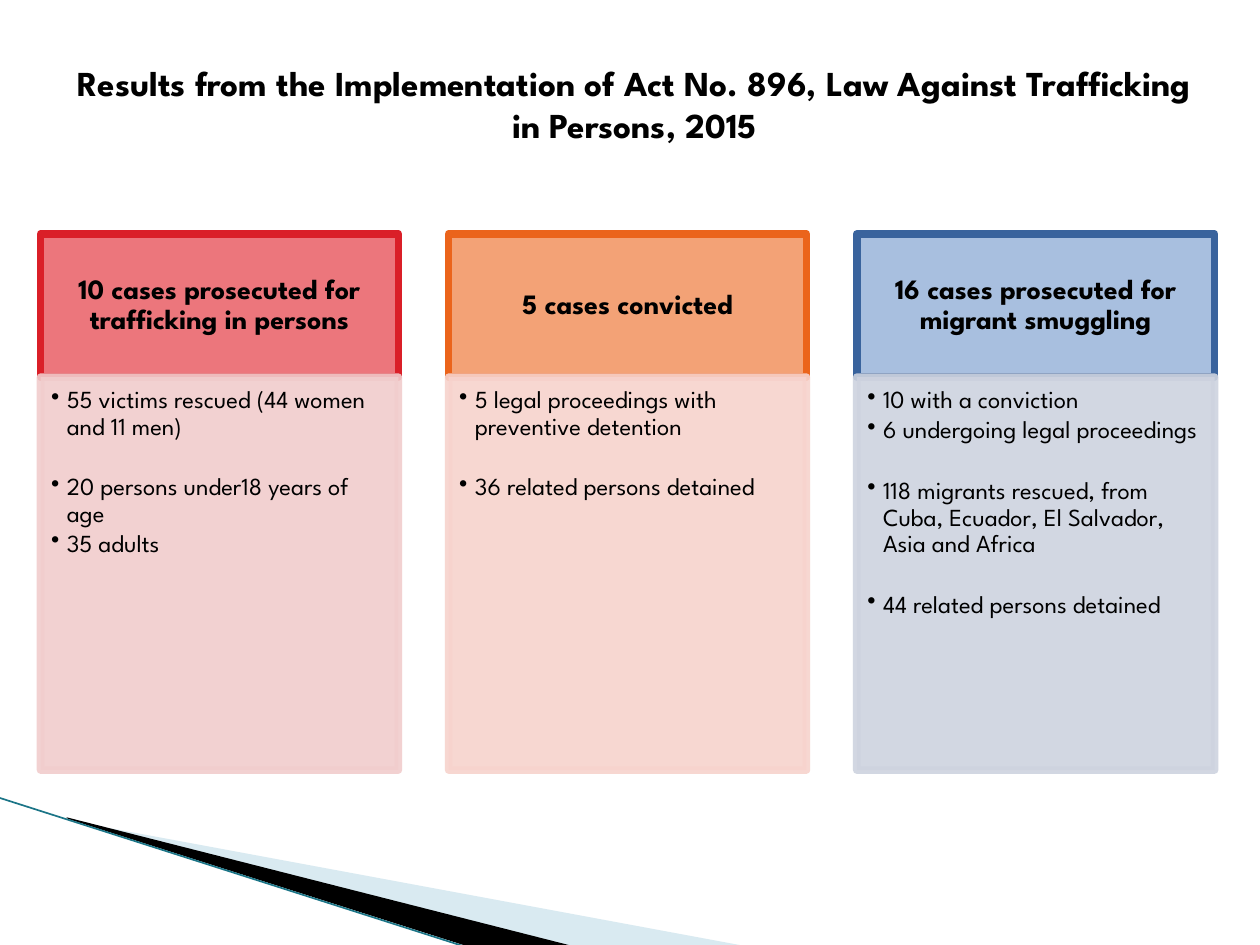
from lxml import etree
from pptx import Presentation
from pptx.dml.color import RGBColor
from pptx.enum import shapes, text
from pptx.oxml import ns
from pptx.util import Pt

FONT = "League Spartan"
BLACK = RGBColor(0, 0, 0)
PALE = RGBColor(0xA0, 0xCB, 0xDC)
TEAL = RGBColor(0x1B, 0x75, 0x87)

TITLE = ("Results from the Implementation of Act No. 896, "
         "Law Against Trafficking in Persons, 2015")
CARDS = [
    {"head": "10 cases prosecuted for trafficking in persons",
     "fill": RGBColor(0xEC, 0x76, 0x7C), "edge": RGBColor(0xDA, 0x1F, 0x28),
     "tint": RGBColor(0xF1, 0xCD, 0xCD),
     "groups": [["55 victims rescued (44 women and 11 men)"],
                ["20 persons under18 years of age", "35 adults"]]},
    {"head": "5 cases convicted",
     "fill": RGBColor(0xF3, 0xA2, 0x76), "edge": RGBColor(0xEB, 0x64, 0x1B),
     "tint": RGBColor(0xF7, 0xD3, 0xCD),
     "groups": [["5 legal proceedings with preventive detention"],
                ["36 related persons detained"]]},
    {"head": "16 cases prosecuted for migrant smuggling",
     "fill": RGBColor(0xA8, 0xBF, 0xDF), "edge": RGBColor(0x39, 0x63, 0x9D),
     "tint": RGBColor(0xCE, 0xD3, 0xDF),
     "groups": [["10 with a conviction", "6 undergoing legal proceedings"],
                ["118 migrants rescued, from Cuba, Ecuador, El Salvador, Asia and Africa"],
                ["44 related persons detained"]]},
]
WEDGES = [
    (PALE, 40, [(39.6, 468.7), (428.4, 540.7), (328.3, 540.7), (39.6, 468)]),
    (BLACK, 100, [(38.2, 467.3), (329, 540.7), (267.8, 541.4), (38.9, 468)]),
]

LEFT, STEP, WIDE = 23.2, 233.2, 204.5
TOP, HEAD, BODY = 133.7, 81.8, 224.6
AFTER, GAP = 2.1, 17.4


def fade(shape, share):
    for clr in shape._element.spPr.iter(ns.qn("a:srgbClr")):
        etree.SubElement(clr, ns.qn("a:alpha"), val=str(share * 1000))


def style(para, size, bold=False):
    para.font.name = FONT
    para.font.size = Pt(size)
    para.font.bold = bold
    para.font.color.rgb = BLACK


def panel(x, y, high, fill, edge, inset, anchor):
    box = slide.shapes.add_shape(
        shapes.MSO_SHAPE.RECTANGLE, Pt(x), Pt(y), Pt(WIDE), Pt(high))
    box.shadow.inherit = False
    box.fill.solid()
    box.fill.fore_color.rgb = fill
    box.line.color.rgb = edge
    box.line.width = Pt(4.33)
    frame = box.text_frame
    frame.word_wrap = True
    frame.vertical_anchor = anchor
    (frame.margin_left, frame.margin_top,
     frame.margin_right, frame.margin_bottom) = map(Pt, inset)
    return box


def bullet(para):
    props = para._p.get_or_add_pPr()
    props.set("marL", str(Pt(9)))
    props.set("indent", str(-Pt(9)))
    etree.SubElement(props, ns.qn("a:buChar"), char="•")


def card(x, data):
    head = panel(x, TOP, HEAD, data["fill"], data["edge"],
                 (9, 5, 9, 5), text.MSO_ANCHOR.MIDDLE)
    head.text_frame.text = data["head"]
    para = head.text_frame.paragraphs[0]
    para.alignment = text.PP_ALIGN.CENTER
    para.line_spacing = 0.9
    style(para, 16, True)

    body = panel(x, TOP + HEAD, BODY, data["tint"], data["tint"],
                 (6, 6, 8, 9), text.MSO_ANCHOR.TOP)
    fade(body, 90)
    frame = body.text_frame
    rows = [(item, g > 0 and i == 0)
            for g, group in enumerate(data["groups"])
            for i, item in enumerate(group)]
    frame.text = "\n".join(item for item, _ in rows)
    for para, (_, apart) in zip(frame.paragraphs, rows):
        bullet(para)
        para.alignment = text.PP_ALIGN.LEFT
        para.line_spacing = 0.9
        para.space_before = Pt(GAP if apart else 0)
        para.space_after = Pt(AFTER)
        style(para, 14)


deck = Presentation()
deck.slide_width, deck.slide_height = Pt(720), Pt(540)
slide = deck.slides.add_slide(deck.slide_layouts[6])

for color, share, points in WEDGES:
    pen = slide.shapes.build_freeform(*points[0], scale=12700)
    pen.add_line_segments(points[1:], close=True)
    wedge = pen.convert_to_shape()
    wedge.shadow.inherit = False
    wedge.fill.solid()
    wedge.fill.fore_color.rgb = color
    wedge.line.fill.background()
    if share < 100:
        fade(wedge, share)

rule = slide.shapes.add_connector(
    shapes.MSO_CONNECTOR.STRAIGHT, Pt(-0.7), Pt(455.8), Pt(267.1), Pt(541.4))
rule.line.color.rgb = TEAL
rule.line.width = Pt(0.95)
etree.SubElement(rule._element.spPr, ns.qn("a:effectLst"))

title = slide.shapes.add_textbox(Pt(31), Pt(31.7), Pt(663), Pt(55.4))
title.text_frame.word_wrap = True
title.text_frame.text = TITLE
lead = title.text_frame.paragraphs[0]
lead.alignment = text.PP_ALIGN.CENTER
style(lead, 20, True)

for n, data in enumerate(CARDS):
    card(LEFT + n * STEP, data)

deck.save("out.pptx")
